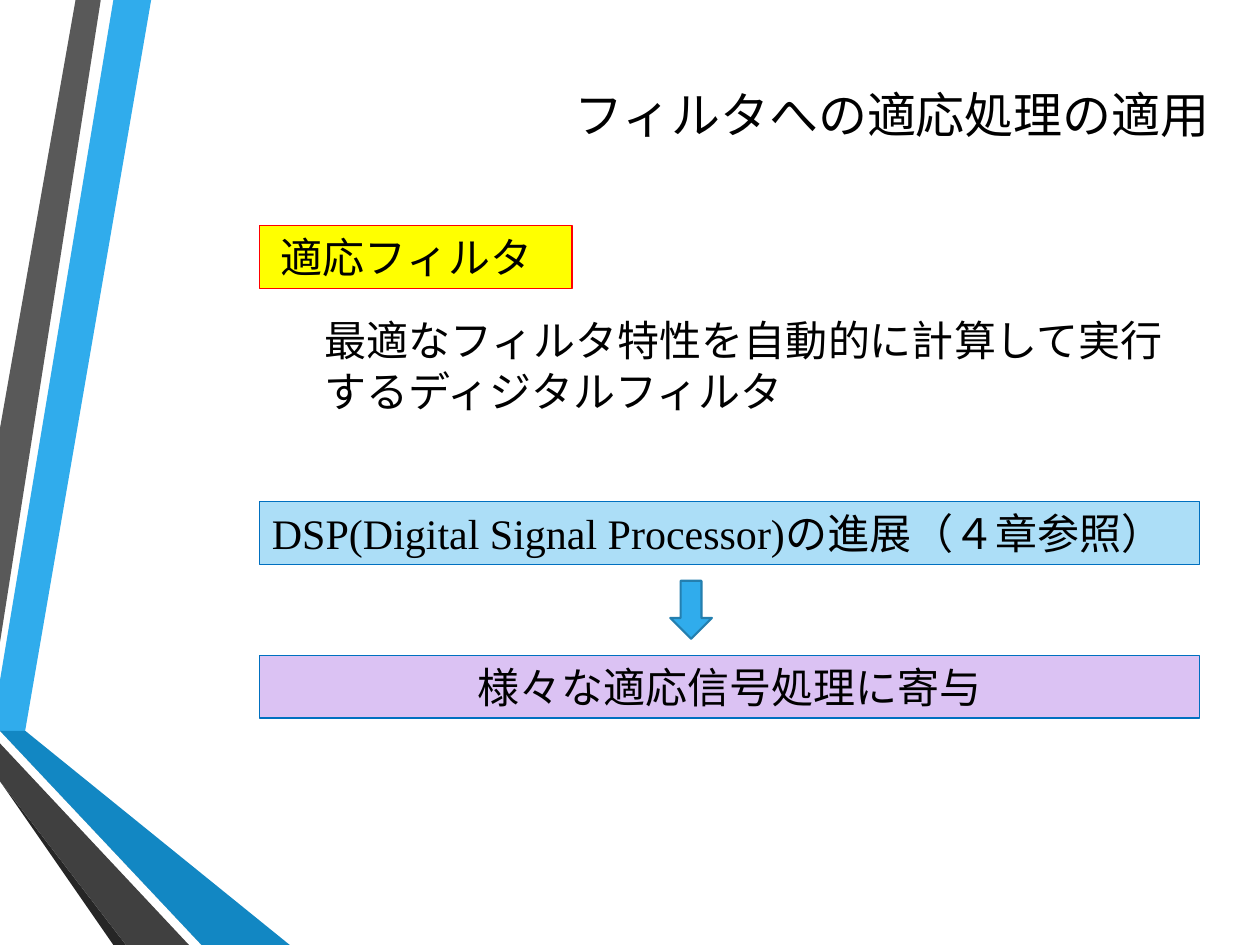
"""Build the slide on applying adaptive processing to filters."""
from pptx import Presentation
from pptx.dml.color import RGBColor
from pptx.enum.shapes import MSO_SHAPE
from pptx.enum.text import MSO_ANCHOR, PP_ALIGN
from pptx.util import Inches, Pt

RECT, DOWN_ARROW = MSO_SHAPE.RECTANGLE, MSO_SHAPE.DOWN_ARROW
LEFT, CENTER, RIGHT = PP_ALIGN.LEFT, PP_ALIGN.CENTER, PP_ALIGN.RIGHT
TOP, MIDDLE = MSO_ANCHOR.TOP, MSO_ANCHOR.MIDDLE

WIDTH, HEIGHT = Inches(10), Inches(7.5)
COLS, ROWS = 100, 75
COLORS = {
    "text": "000000", "sky": "30ACEC", "gray": "595959", "coal": "262626",
    "navy": "0C5A82", "blue": "1287C3", "dark": "404040", "yellow": "FFFF00",
    "red": "FF0000", "pale": "ACDEF7", "lilac": "DBC2F3", "edge": "0070C0",
    "arrow_edge": "247FAF",
}
RIBBONS = [
    ("sky", [(0, 54.4), (0, 57.5), (2.2, 57.9), (11.7, 0), (8.9, 0)]),
    ("gray", [(8.3, 0), (5.5, 0), (0, 33.6), (0, 50.6)]),
    ("coal", [(0, 61.9), (0, 62.1), (9.3, 75), (9.9, 75)]),
    ("navy", [(0, 57.9), (0, 58), (15.6, 75), (16.3, 75)]),
    ("blue", [(0, 57.9), (16.3, 75), (23.3, 75), (2.2, 57.9), (0, 57.5)]),
    ("dark", [(0, 61.9), (9.9, 75), (15.1, 75), (0, 58.6)]),
]


def rgb(name):
    """Return the palette colour called name."""
    return RGBColor.from_string(COLORS[name])


def set_text(tf, text, size=24, font="Times New Roman", align=LEFT, anchor=TOP, indent=0.1):
    """Write one formatted paragraph into a text frame."""
    tf.word_wrap = True
    tf.vertical_anchor = anchor
    tf.margin_left = Inches(indent)
    p = tf.paragraphs[0]
    p.alignment = align
    r = p.add_run()
    r.text = text
    r.font.size, r.font.name = Pt(size), font
    r.font.color.rgb = rgb("text")


class SlideBuilder:
    """Hold the current slide and place elements on its grid."""

    def __init__(self, s):
        """Start on the given slide."""
        self.s = s

    def place(self, col, row, cols, rows):
        """Turn grid cells into left, top, width and height."""
        x, y = WIDTH / COLS, HEIGHT / ROWS
        return [round(v) for v in (col * x, row * y, cols * x, rows * y)]

    def paint(self, sp, fill, line=None, weight=0.75):
        """Set fill and outline and drop the shadow."""
        sp.shadow.inherit = False
        sp.fill.solid()
        sp.fill.fore_color.rgb = rgb(fill)
        if line:
            sp.line.color.rgb = rgb(line)
            sp.line.width = Pt(weight)
        else:
            sp.line.fill.background()

    def ribbon(self, fill, points):
        """Draw a closed polygon through grid points."""
        fb = self.s.shapes.build_freeform(*points[0], scale=WIDTH / COLS)
        fb.add_line_segments(points[1:], close=True)
        self.paint(fb.convert_to_shape(), fill)

    def title(self, text, grid, **fmt):
        """Move and fill the title placeholder."""
        sp = self.s.shapes.title
        sp.left, sp.top, sp.width, sp.height = self.place(*grid)
        set_text(sp.text_frame, text, **fmt)

    def text(self, text, grid, **fmt):
        """Add a wrapping text box."""
        sp = self.s.shapes.add_textbox(*self.place(*grid))
        set_text(sp.text_frame, text, **fmt)

    def box(self, text, grid, fill, line, **fmt):
        """Add a filled rectangle with text."""
        sp = self.s.shapes.add_shape(RECT, *self.place(*grid))
        self.paint(sp, fill, line)
        set_text(sp.text_frame, text, **fmt)

    def arrow(self, grid, fill, line):
        """Add a downward block arrow."""
        sp = self.s.shapes.add_shape(DOWN_ARROW, *self.place(*grid))
        self.paint(sp, fill, line, 1.25)


def main():
    """Build and save the slide."""
    prs = Presentation()
    prs.slide_width, prs.slide_height = WIDTH, HEIGHT
    b = SlideBuilder(prs.slides.add_slide(prs.slide_layouts[5]))
    for fill, points in RIBBONS:
        b.ribbon(fill, points)
    b.title("フィルタへの適応処理の適用", (12.7, 1.8, 84.3, 14.5),
            size=28, font="Calibri", align=RIGHT, anchor=MIDDLE)
    b.box("適応フィルタ", (20.6, 17.9, 24.8, 5), "yellow", "red", indent=0.17)
    b.text("最適なフィルタ特性を自動的に計算して実行するディジタルフィルタ",
           (24.8, 24.5, 70.4, 9.1))
    b.box("DSP(Digital Signal Processor)の進展（４章参照）",
          (20.6, 39.8, 74.6, 5), "pale", "edge")
    b.box("様々な適応信号処理に寄与", (20.6, 52, 74.6, 5), "lilac", "edge", align=CENTER)
    b.arrow((53.2, 46.1, 3.3, 4.6), "sky", "arrow_edge")
    prs.save("out.pptx")


if __name__ == "__main__":
    main()
